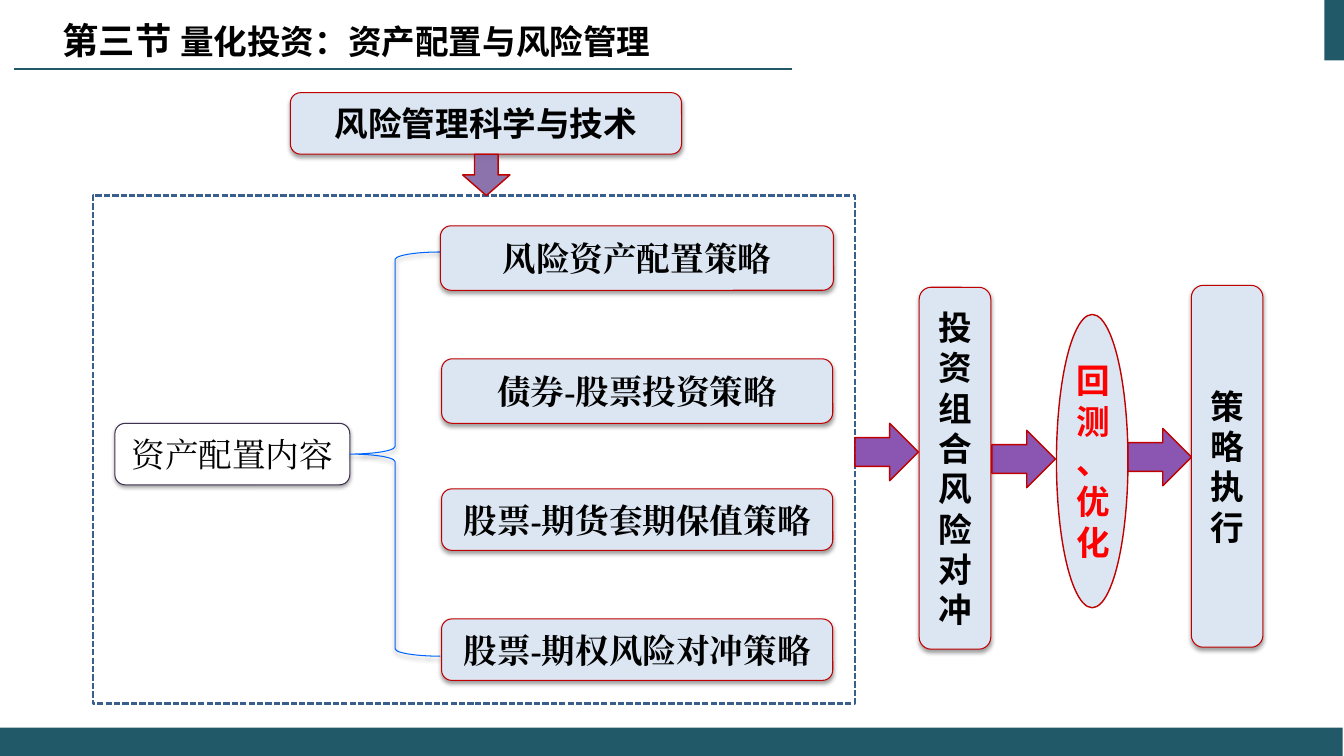
from dataclasses import dataclass

from lxml import etree
from pptx import Presentation
from pptx.dml.color import RGBColor
from pptx.enum.dml import MSO_LINE
from pptx.enum.shapes import MSO_CONNECTOR, MSO_SHAPE
from pptx.enum.text import MSO_ANCHOR, PP_ALIGN
from pptx.oxml.ns import qn
from pptx.util import Pt

RECT = MSO_SHAPE.RECTANGLE
ROUNDED = MSO_SHAPE.ROUNDED_RECTANGLE
ELLIPSE = MSO_SHAPE.OVAL
BRACE = MSO_SHAPE.LEFT_BRACE
DOWN = MSO_SHAPE.DOWN_ARROW
RIGHT = MSO_SHAPE.RIGHT_ARROW
STRAIGHT = MSO_CONNECTOR.STRAIGHT
DASH = MSO_LINE.SQUARE_DOT
MIDDLE = MSO_ANCHOR.MIDDLE
CENTER = PP_ALIGN.CENTER
LEFT = PP_ALIGN.LEFT


@dataclass(frozen=True)
class Theme:
    teal: str = "215968"
    frame: str = "3A5F8C"
    white: str = "FFFFFF"
    black: str = "000000"
    pale: str = "DCE6F2"
    crimson: str = "C00000"
    red: str = "FF0000"
    indigo: str = "403152"
    blue: str = "0066FF"
    violet: str = "8064A2"
    purple: str = "7030A0"
    heading: float = 26
    body: float = 24
    title_font: str = "Noto Sans CJK SC"
    serif: str = "Times New Roman"
    sans: str = "Calibri"


class Diagram:
    def __init__(self, slide, theme):
        self.slide = slide
        self.theme = theme

    def style_run(self, run, font, size, color, bold):
        run.font.name = font
        run.font.size = Pt(size)
        run.font.bold = bold
        run.font.color.rgb = RGBColor.from_string(color)
        east_asian = etree.Element(qn("a:ea"), typeface=font)
        run.font._element.find(qn("a:latin")).addnext(east_asian)

    def title(self, parts, box):
        heading = self.slide.shapes.title
        heading.left, heading.top, heading.width, heading.height = map(Pt, box)
        frame = heading.text_frame
        frame.word_wrap = True
        frame.vertical_anchor = MIDDLE
        paragraph = frame.paragraphs[0]
        paragraph.alignment = LEFT
        for words, size in parts:
            run = paragraph.add_run()
            run.text = words
            self.style_run(run, self.theme.title_font, size, self.theme.black, True)

    def shape(self, kind, box, fill=None, line=None, width=0.75, alpha=None):
        item = self.slide.shapes.add_shape(kind, *map(Pt, box))
        item.shadow.inherit = False
        if fill:
            item.fill.solid()
            item.fill.fore_color.rgb = RGBColor.from_string(fill)
        else:
            item.fill.background()
        if line:
            item.line.color.rgb = RGBColor.from_string(line)
            item.line.width = Pt(width)
        else:
            item.line.fill.background()
        if alpha:
            color = item.fill._xPr.find(qn("a:solidFill"))[0]
            etree.SubElement(color, qn("a:alpha"), val=str(alpha * 1000))
        return item

    def cast_shadow(self, item):
        effects = item._element.spPr.find(qn("a:effectLst"))
        shadow = etree.SubElement(
            effects, qn("a:outerShdw"), blurRad=str(Pt(3.1)), dist=str(Pt(1.6)),
            dir="5400000", rotWithShape="0")
        color = etree.SubElement(shadow, qn("a:srgbClr"), val=self.theme.black)
        etree.SubElement(color, qn("a:alpha"), val="38000")

    def label(self, item, words, font, color, bold=True):
        frame = item.text_frame
        frame.text = words
        frame.word_wrap = True
        frame.vertical_anchor = MIDDLE
        frame.paragraphs[0].alignment = CENTER
        self.style_run(frame.paragraphs[0].runs[0], font, self.theme.body, color, bold)

    def card(self, words, box, font, fill=None, line=None, bold=True):
        item = self.shape(ROUNDED, box, fill or self.theme.pale, line or self.theme.crimson)
        self.cast_shadow(item)
        self.label(item, words, font, self.theme.black, bold)
        item.text_frame.margin_left = item.text_frame.margin_right = Pt(3.6)

    def ellipse(self, words, box):
        item = self.shape(ELLIPSE, box, self.theme.pale, self.theme.crimson, 1)
        self.label(item, words, self.theme.sans, self.theme.red)

    def arrow(self, kind, box, fill, alpha):
        self.shape(kind, box, fill, self.theme.crimson, 1, alpha)

    def brace(self, box):
        self.cast_shadow(self.shape(BRACE, box, line=self.theme.blue))

    def rule(self, start, end, y):
        line = self.slide.shapes.add_connector(STRAIGHT, Pt(start), Pt(y), Pt(end), Pt(y))
        line.line.color.rgb = RGBColor.from_string(self.theme.teal)
        line.line.width = Pt(1.5)
        etree.SubElement(line._element.spPr, qn("a:effectLst"))


def main():
    theme = Theme()
    deck = Presentation()
    deck.slide_width, deck.slide_height = Pt(960), Pt(540)
    diagram = Diagram(deck.slides.add_slide(deck.slide_layouts[5]), theme)

    diagram.title(
        [("第三节 ", theme.heading), ("量化投资：资产配置与风险管理", theme.body)],
        (37.4, 9.4, 499, 38.9))
    diagram.shape(RECT, (946.1, 0, 14.4, 43.2), theme.teal)
    diagram.rule(565.9, 10.1, 49)
    diagram.shape(RECT, (0, 519.8, 959, 20.2), theme.teal)

    scope = diagram.shape(RECT, (66.2, 139.7, 544.3, 362.9), line=theme.frame, width=1.5)
    scope.line.dash_style = DASH
    diagram.card("资产配置内容", (82.1, 302.4, 167.8, 43.9), theme.serif,
                 theme.white, theme.indigo, False)
    diagram.brace((249.8, 180, 64.8, 288.7))

    strategies = [
        ("风险资产配置策略", (314.6, 161.3, 280.8, 46.1)),
        ("债券-股票投资策略", (315.4, 256.3, 279.4, 46.1)),
        ("股票-期货套期保值策略", (315.4, 349.2, 279.4, 43.9)),
        ("股票-期权风险对冲策略", (315.4, 442.1, 279.4, 43.9)),
    ]
    for words, box in strategies:
        diagram.card(words, box, theme.serif)

    diagram.card("风险管理科学与技术", (207.4, 66.2, 279.4, 43.9), theme.sans)
    diagram.arrow(DOWN, (330.5, 110.2, 33.8, 29.5), theme.violet, 90)

    diagram.card("投资组合风险对冲", (656.6, 205.2, 51.1, 258.5), theme.sans)
    diagram.ellipse("回测、优化", (754.6, 224.6, 51.1, 209.5))
    diagram.card("策略执行", (851, 203.8, 51.1, 258.5), theme.sans)
    for left, top in [(610.6, 302.4), (708.5, 307.4), (805.7, 306)]:
        diagram.arrow(RIGHT, (left, top, 45.4, 41), theme.purple, 81)

    deck.save("out.pptx")


if __name__ == "__main__":
    main()
